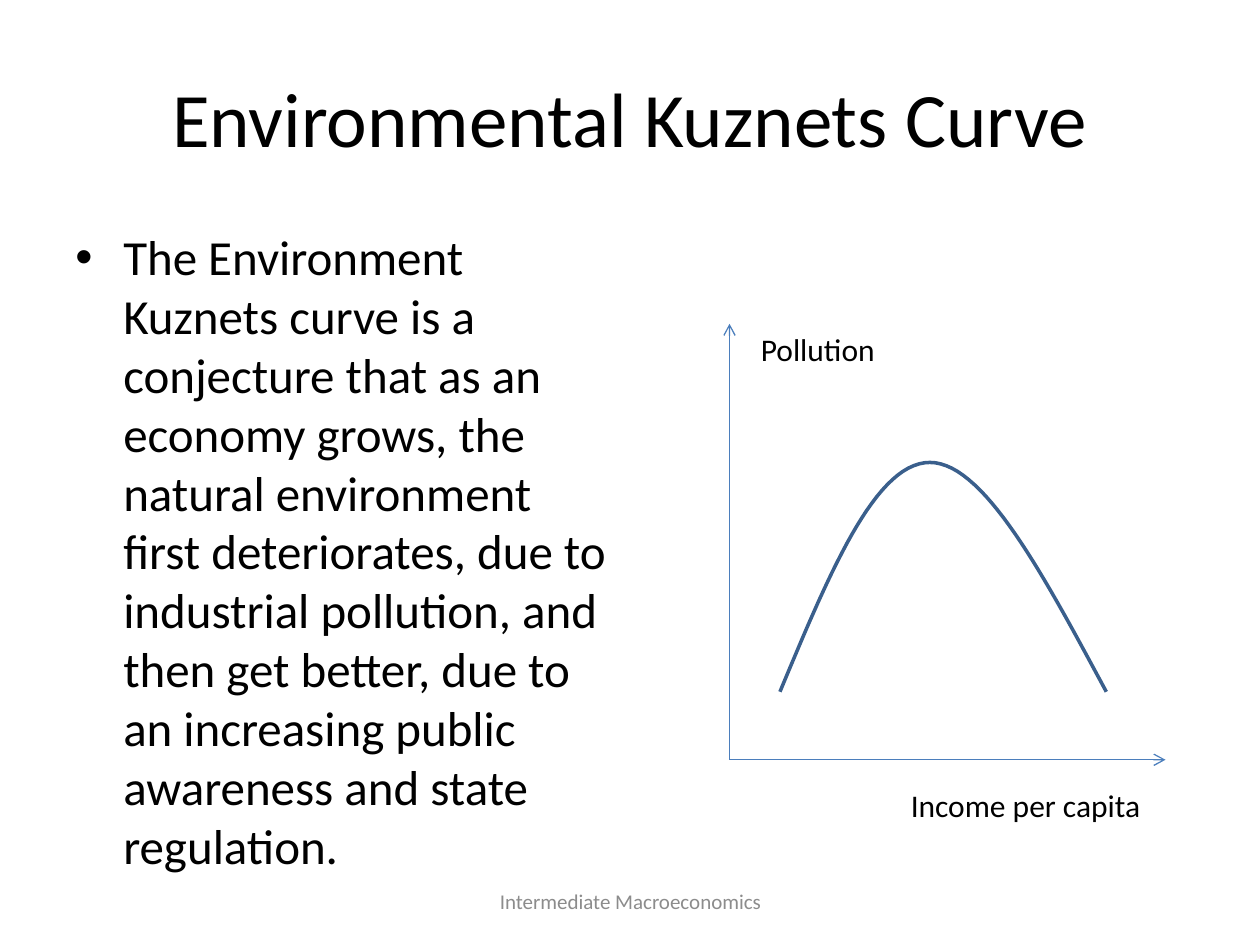
from lxml import etree
from pptx import Presentation
from pptx.dml.color import RGBColor
from pptx.enum.shapes import MSO_CONNECTOR
from pptx.enum.text import MSO_ANCHOR, PP_ALIGN
from pptx.oxml.ns import qn
from pptx.util import Inches, Pt

LEFT, CENTER = PP_ALIGN.LEFT, PP_ALIGN.CENTER
TOP, MIDDLE = MSO_ANCHOR.TOP, MSO_ANCHOR.MIDDLE
STRAIGHT = MSO_CONNECTOR.STRAIGHT
BLACK = RGBColor(0x00, 0x00, 0x00)
GRAY = RGBColor(0x8C, 0x8C, 0x8C)
AXIS_BLUE = RGBColor(0x4B, 0x7E, 0xBC)
CURVE_BLUE = RGBColor(0x3A, 0x5F, 0x8C)
FONT = "Calibri"

BODY = ("The Environment Kuznets curve is a conjecture that as an economy grows, "
        "the natural environment first deteriorates, due to industrial pollution, "
        "and then get better, due to an increasing public awareness and state regulation.")
TEXTS = [
    ("Environmental Kuznets Curve", (0.5, 0.3, 9, 1.25), 44, BLACK, CENTER, MIDDLE, False),
    (BODY, (0.5, 1.75, 4.42, 4.95), 28, BLACK, LEFT, TOP, True),
    ("Intermediate Macroeconomics", (3.42, 6.95, 3.17, 0.4), 12, GRAY, CENTER, MIDDLE, False),
    ("Income per capita", (7.13, 6.19, 2.52, 0.4), 18, BLACK, LEFT, TOP, False),
    ("Pollution", (5.94, 2.57, 1.97, 0.4), 18, BLACK, LEFT, TOP, False),
]
ORIGIN = (5.79, 6.03)
AXIS_ENDS = [(9.25, 6.03), (5.79, 2.57)]
CURVE = [
    ((6.19, 5.49), (6.57, 4.58), (6.94, 3.67), (7.38, 3.67)),
    ((7.38, 3.67), (7.81, 3.67), (8.29, 4.58), (8.78, 5.49)),
]
STEPS = 30


def add_text(slide, text, box, size, color, align, anchor, bullet):
    tf = slide.shapes.add_textbox(*map(Inches, box)).text_frame
    tf.word_wrap = True
    tf.vertical_anchor = anchor
    p = tf.paragraphs[0]
    p.alignment = align
    r = p.add_run()
    r.text = text
    for name, value in {"name": FONT, "size": Pt(size)}.items():
        setattr(r.font, name, value)
    r.font.color.rgb = color
    if bullet:
        pPr = p._p.get_or_add_pPr()
        pPr.set("marL", str(Inches(0.38)))
        pPr.set("indent", str(Inches(-0.38)))
        etree.SubElement(pPr, qn("a:buFont")).set("typeface", "Arial")
        etree.SubElement(pPr, qn("a:buChar")).set("char", "•")


def add_axis(slide, end):
    sp = slide.shapes.add_connector(STRAIGHT, *map(Inches, ORIGIN + end))
    sp.line.color.rgb = AXIS_BLUE
    sp.line.width = Pt(0.75)
    etree.SubElement(sp.line._get_or_add_ln(), qn("a:tailEnd")).set("type", "arrow")
    etree.SubElement(sp._element.spPr, qn("a:effectLst"))


def bezier(points, t):
    weights = ((1 - t) ** 3, 3 * t * (1 - t) ** 2, 3 * t ** 2 * (1 - t), t ** 3)
    return tuple(Inches(sum(w * v for w, v in zip(weights, axis))) for axis in zip(*points))


def add_curve(slide):
    points = [bezier(part, i / STEPS) for part in CURVE for i in range(1, STEPS + 1)]
    builder = slide.shapes.build_freeform(*bezier(CURVE[0], 0))
    builder.add_line_segments(points, close=False)
    sp = builder.convert_to_shape()
    sp.shadow.inherit = False
    sp.fill.background()
    sp.line.color.rgb = CURVE_BLUE
    sp.line.width = Pt(2)


def main():
    prs = Presentation()
    prs.slide_width, prs.slide_height = Inches(10), Inches(7.5)
    slide = prs.slides.add_slide(prs.slide_layouts[6])
    for end in AXIS_ENDS:
        add_axis(slide, end)
    add_curve(slide)
    for item in TEXTS:
        add_text(slide, *item)
    prs.save("out.pptx")


if __name__ == "__main__":
    main()
